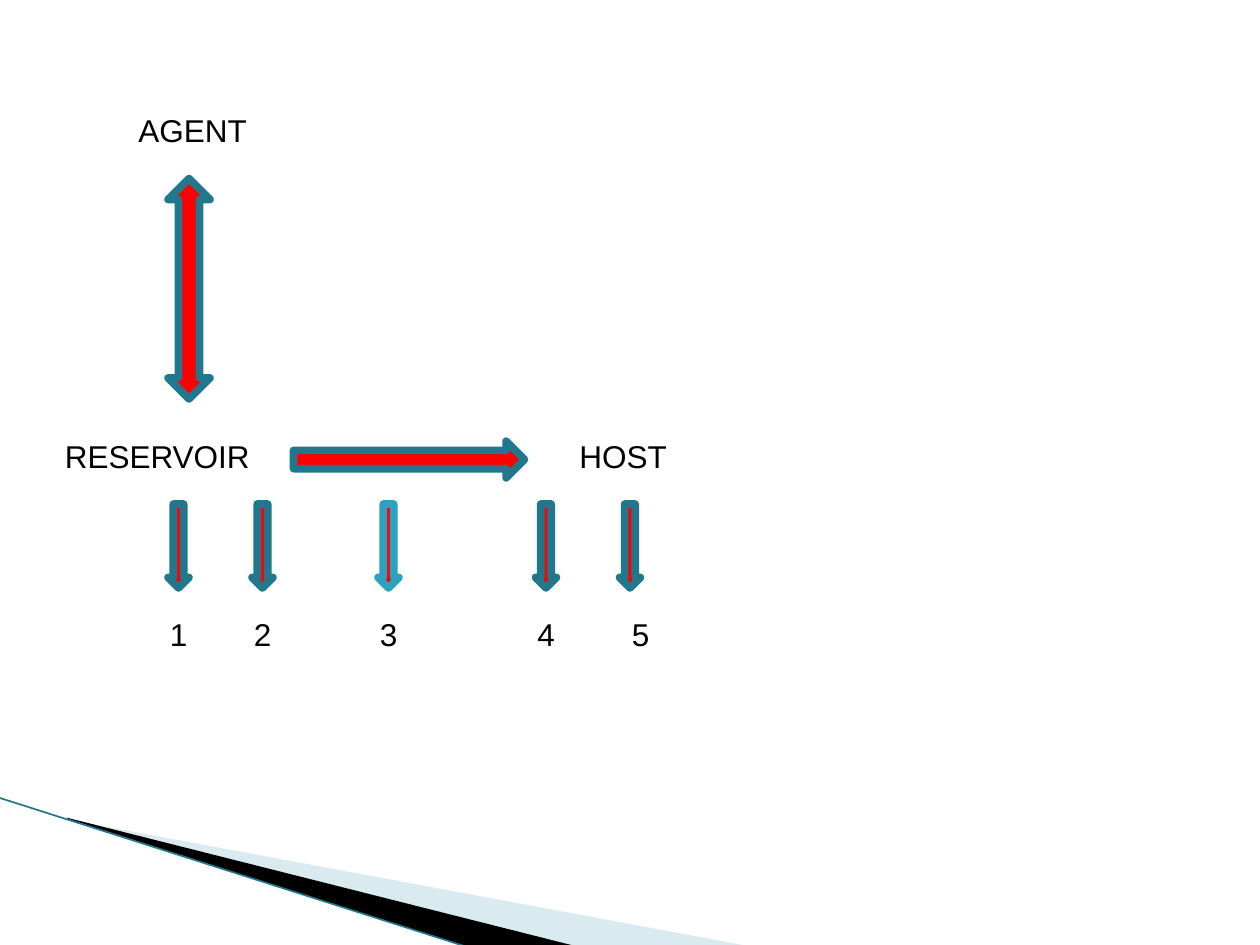
from pptx import Presentation
from pptx.dml.color import RGBColor
from pptx.enum.shapes import MSO_CONNECTOR, MSO_SHAPE
from pptx.enum.text import MSO_AUTO_SIZE
from pptx.oxml.ns import qn
from pptx.util import Pt
from lxml import etree

DOWN = MSO_SHAPE.DOWN_ARROW
UP_DOWN = MSO_SHAPE.UP_DOWN_ARROW
STRAIGHT = MSO_CONNECTOR.STRAIGHT
FIT_SHAPE = MSO_AUTO_SIZE.SHAPE_TO_FIT_TEXT

TEAL, BRIGHT_TEAL, PALE_BLUE = "21788D", "2DA2BF", "A0CBDC"
RED, BLACK = "FF0000", "000000"


def rgb(color):
    return RGBColor.from_string(color)


class Canvas:
    """Holds the style and the current slide; lengths are in points."""
    font = "Arial"
    size = 18
    outline = 4.33

    def __init__(self, slide):
        self.shapes = slide.shapes

    def label(self, text, x, y, w, h=28.8):
        sp = self.shapes.add_textbox(Pt(x), Pt(y), Pt(w), Pt(h))
        tf = sp.text_frame
        tf.word_wrap = True
        tf.auto_size = FIT_SHAPE
        p = tf.paragraphs[0]
        p.text = text
        p.font.name = self.font
        p.font.size = Pt(self.size)
        p.font.color.rgb = rgb(BLACK)

    def arrow(self, kind, x, y, w, h, line=TEAL, rotation=0):
        sp = self.shapes.add_shape(kind, Pt(x), Pt(y), Pt(w), Pt(h))
        sp.rotation = rotation
        sp.shadow.inherit = False
        sp.fill.solid()
        sp.fill.fore_color.rgb = rgb(RED)
        sp.line.color.rgb = rgb(line)
        sp.line.width = Pt(self.outline)

    def wedge(self, points, color, opacity=100):
        corners = [(Pt(x), Pt(y)) for x, y in points]
        builder = self.shapes.build_freeform(*corners[0])
        builder.add_line_segments(corners[1:], close=True)
        sp = builder.convert_to_shape()
        sp.shadow.inherit = False
        sp.fill.solid()
        sp.fill.fore_color.rgb = rgb(color)
        sp.line.fill.background()
        if opacity < 100:
            clr = sp.fill._xPr.find(qn("a:solidFill"))[0]
            etree.SubElement(clr, qn("a:alpha"), val=str(opacity * 1000))

    def line(self, x1, y1, x2, y2, color, width):
        cn = self.shapes.add_connector(STRAIGHT, Pt(x1), Pt(y1), Pt(x2), Pt(y2))
        cn.line.color.rgb = rgb(color)
        cn.line.width = Pt(width)
        etree.SubElement(cn._element.spPr, qn("a:effectLst"))


def main():
    prs = Presentation()
    prs.slide_width, prs.slide_height = Pt(720), Pt(540)
    s = Canvas(prs.slides.add_slide(prs.slide_layouts[6]))

    # Corner decoration
    s.wedge([(39.6, 468.5), (428.4, 540.7), (328.3, 540.7), (39.6, 468)],
            PALE_BLUE, opacity=40)
    s.wedge([(38.2, 467.3), (329, 540.7), (267.8, 541.4), (38.9, 468)], BLACK)
    s.line(-0.7, 455.8, 267.8, 541.4, TEAL, 0.95)

    # Agent, reservoir and host
    s.arrow(DOWN, 223.2, 196.6, 21, 132, rotation=270)
    s.arrow(UP_DOWN, 96, 102, 24, 126)
    s.label("AGENT", 72, 60, 102)
    s.label("RESERVOIR", 30, 246, 138)
    s.label("HOST", 324, 246, 96)

    # Numbered steps: arrow left, label left
    steps = [(96, 90), (144, 138), (216, 210), (306, 300), (354, 354)]
    for number, (arrow_x, label_x) in enumerate(steps, 1):
        line = BRIGHT_TEAL if number == 3 else TEAL
        s.arrow(DOWN, arrow_x, 288, 12, 48, line)
        s.label(str(number), label_x, 348, 24)

    prs.save("out.pptx")


if __name__ == "__main__":
    main()
